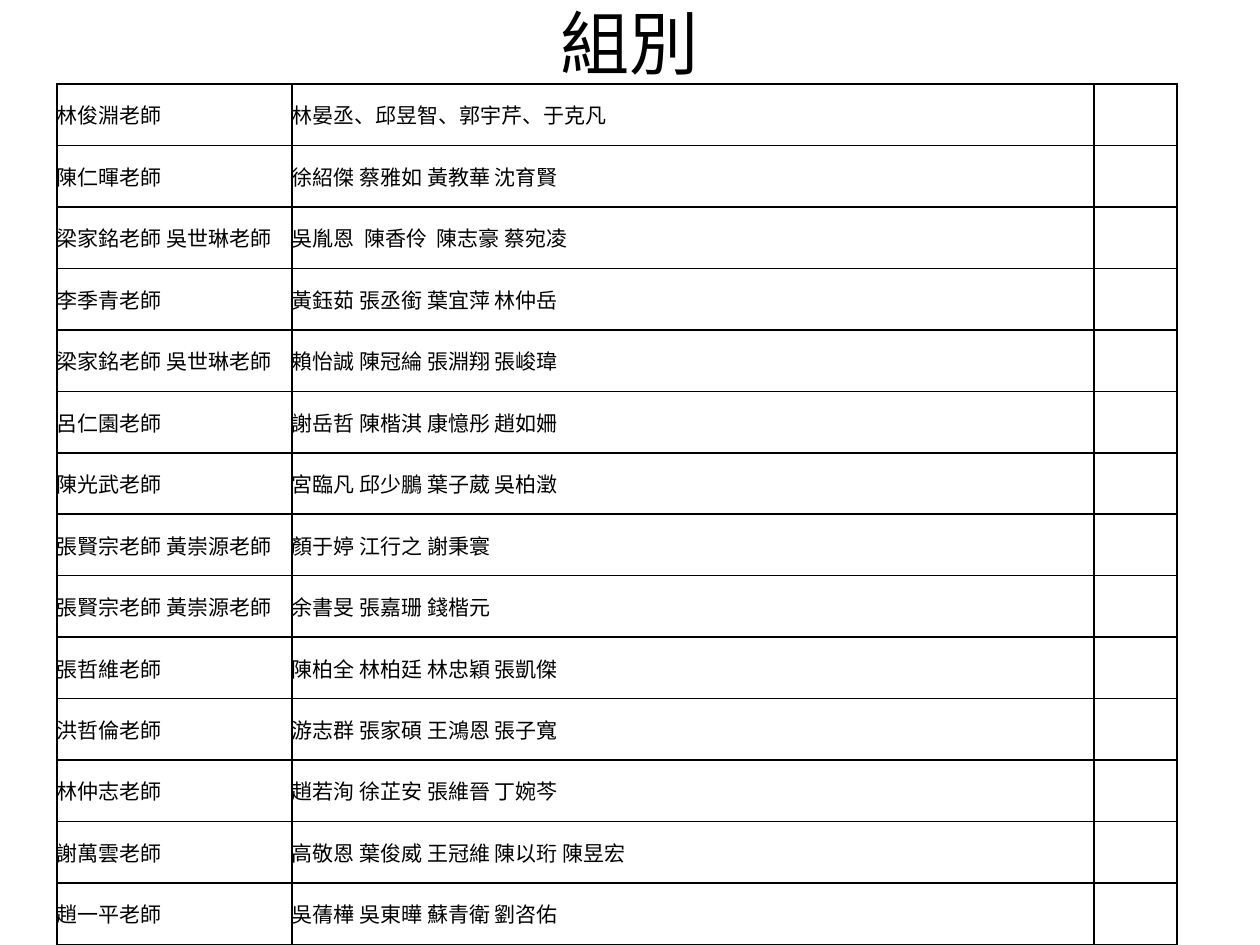
"""Build the slide that lists each teacher's group of students."""
from lxml import etree
from pptx import Presentation
from pptx import util as u
from pptx.dml.color import RGBColor
from pptx.enum import text
from pptx.oxml.ns import qn

TITLE = "組別"
GROUPS = [
    ("林俊淵老師", "林晏丞、邱昱智、郭宇芹、于克凡"),
    ("陳仁暉老師", "徐紹傑 蔡雅如 黃教華 沈育賢"),
    ("梁家銘老師 吳世琳老師", "吳胤恩  陳香伶  陳志豪 蔡宛凌"),
    ("李季青老師", "黃鈺茹 張丞銜 葉宜萍 林仲岳"),
    ("梁家銘老師 吳世琳老師", "賴怡誠 陳冠綸 張淵翔 張峻瑋"),
    ("呂仁園老師", "謝岳哲 陳楷淇 康憶彤 趙如姍"),
    ("陳光武老師", "宮臨凡 邱少鵬 葉子葳 吳柏澂"),
    ("張賢宗老師 黃崇源老師", "顏于婷 江行之 謝秉寰"),
    ("張賢宗老師 黃崇源老師", "余書旻 張嘉珊 錢楷元"),
    ("張哲維老師", "陳柏全 林柏廷 林忠穎 張凱傑"),
    ("洪哲倫老師", "游志群 張家碩 王鴻恩 張子寬"),
    ("林仲志老師", "趙若洵 徐芷安 張維晉 丁婉芩"),
    ("謝萬雲老師", "高敬恩 葉俊威 王冠維 陳以珩 陳昱宏"),
    ("趙一平老師", "吳蒨樺 吳東曄 蘇青衛 劉咨佑"),
]
COLUMNS = [235, 802, 83]
TITLE_BOX = (63, 0, 1134, 84)
TABLE_LEFT, TABLE_TOP, TABLE_HEIGHT = 57, 84, 861
BLACK = RGBColor(0, 0, 0)
PX = u.Inches(1) / 126


def px(n):
    return u.Emu(round(n * PX))


def style(p, name, size):
    p.font.name = name
    p.font.size = u.Pt(size)
    p.font.color.rgb = BLACK


def clear_margins(box):
    box.margin_left = box.margin_right = box.margin_top = box.margin_bottom = 0


def add_borders(cell):
    tc_pr = cell._tc.get_or_add_tcPr()
    for i, side in enumerate(("lnL", "lnR", "lnT", "lnB")):
        ln = etree.Element(qn(f"a:{side}"), w=str(u.Pt(1)))
        fill = etree.SubElement(ln, qn("a:solidFill"))
        etree.SubElement(fill, qn("a:srgbClr"), val=str(BLACK))
        tc_pr.insert(i, ln)


def add_title(slide):
    tf = slide.shapes.add_textbox(*map(px, TITLE_BOX)).text_frame
    tf.word_wrap = True
    clear_margins(tf)
    tf.vertical_anchor = text.MSO_ANCHOR.MIDDLE
    p = tf.paragraphs[0]
    p.text = TITLE
    p.alignment = text.PP_ALIGN.CENTER
    style(p, "Noto Sans CJK SC", 39.6)


def add_groups(slide):
    table = slide.shapes.add_table(
        len(GROUPS), len(COLUMNS), px(TABLE_LEFT), px(TABLE_TOP),
        px(sum(COLUMNS)), px(TABLE_HEIGHT)).table
    table.first_row = table.horz_banding = False
    for column, width in zip(table.columns, COLUMNS):
        column.width = px(width)
    for row, group in zip(table.rows, GROUPS):
        row.height = px(TABLE_HEIGHT / len(GROUPS))
        for cell, words in zip(row.cells, (*group, "")):
            cell.fill.background()
            add_borders(cell)
            clear_margins(cell)
            cell.vertical_anchor = text.MSO_ANCHOR.MIDDLE
            p = cell.text_frame.paragraphs[0]
            p.text = words
            style(p, "Calibri", 12)


def main():
    prs = Presentation()
    prs.slide_width, prs.slide_height = u.Inches(10), u.Inches(7.5)
    slide = prs.slides.add_slide(prs.slide_layouts[6])
    add_title(slide)
    add_groups(slide)
    prs.save("out.pptx")


if __name__ == "__main__":
    main()
